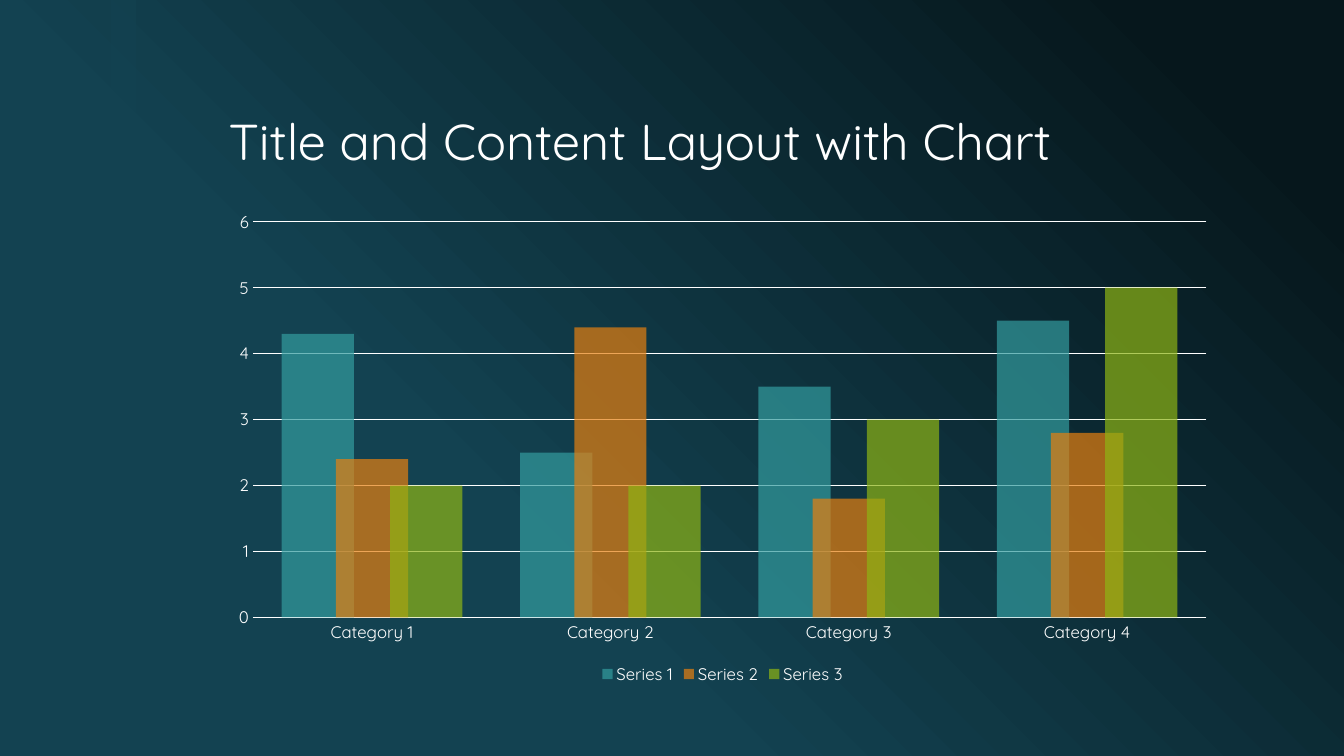
from lxml import etree
from pptx import Presentation
from pptx.chart.data import CategoryChartData
from pptx.dml.color import RGBColor
from pptx.enum import chart as charts, shapes, text
from pptx.oxml import ns
from pptx.util import Cm, Pt

FONT = "Quicksand"
WHITE, TEAL, NIGHT = "FFFFFF", "134251", "06171C"
CATEGORIES = [f"Category {n}" for n in range(1, 5)]
SERIES = [
    ("Series 1", (4.3, 2.5, 3.5, 4.5), "339C9F"),
    ("Series 2", (2.4, 4.4, 1.8, 2.8), "E68010"),
    ("Series 3", (2, 2, 3, 5), "8EB414"),
]


def color(hex_string):
    return RGBColor.from_string(hex_string)


def set_font(font, size):
    font.name = FONT
    font.size = Pt(size)
    font.bold = False
    font.color.rgb = color(WHITE)


def set_line(line, width):
    line.color.rgb = color(WHITE)
    line.width = Pt(width)


def fill_translucent(fill, hex_string, opacity, properties):
    """Fill solidly, with opacity in percent; properties is the spPr element."""
    fill.solid()
    fill.fore_color.rgb = color(hex_string)
    rgb = properties.find(ns.qn("a:solidFill")).find(ns.qn("a:srgbClr"))
    etree.SubElement(rgb, ns.qn("a:alpha")).set("val", str(opacity * 1000))


def paint_background(slide):
    fill = slide.background.fill
    fill.gradient()
    fill.gradient_angle = 225
    for stop, (position, shade) in zip(fill.gradient_stops, [(0.1, NIGHT), (0.65, TEAL)]):
        stop.position = position
        stop.color.rgb = color(shade)


def add_band(slide, left, top, width, height):
    band = slide.shapes.add_shape(shapes.MSO_SHAPE.RECTANGLE, left, top, width, height)
    band.shadow.inherit = False
    band.line.fill.background()
    fill_translucent(band.fill, TEAL, 60, band.element.spPr)


def add_title(slide, left, top, width, height, wording):
    frame = slide.shapes.add_textbox(left, top, width, height).text_frame
    frame.word_wrap = True
    frame.vertical_anchor = text.MSO_ANCHOR.BOTTOM
    heading = frame.paragraphs[0]
    heading.line_spacing = 0.9
    run = heading.add_run()
    run.text = wording
    set_font(run.font, 36)


def add_column_chart(slide, left, top, width, height):
    data = CategoryChartData()
    data.categories = CATEGORIES
    for name, values, _ in SERIES:
        data.add_series(name, values)
    chart = slide.shapes.add_chart(
        charts.XL_CHART_TYPE.COLUMN_CLUSTERED, left, top, width, height, data
    ).chart
    set_font(chart.font, 10)
    chart.has_title = False

    chart.has_legend = True
    chart.legend.position = charts.XL_LEGEND_POSITION.BOTTOM
    chart.legend.include_in_layout = False
    set_font(chart.legend.font, 12)

    for axis in (chart.category_axis, chart.value_axis):
        axis.major_tick_mark = axis.minor_tick_mark = charts.XL_TICK_MARK.NONE
        set_font(axis.tick_labels.font, 12)
    set_line(chart.category_axis.format.line, 1.25)
    chart.value_axis.format.line.fill.background()
    chart.value_axis.has_major_gridlines = True
    set_line(chart.value_axis.major_gridlines.format.line, 0.75)

    columns = chart.plots[0]
    columns.vary_by_categories = False
    columns.gap_width = 80
    columns.overlap = 25
    for series, (_, _, shade) in zip(columns.series, SERIES):
        series.invert_if_negative = False
        fill = series.format.fill
        fill.solid()
        fill_translucent(fill, shade, 70, series.format.element.spPr
                         if hasattr(series.format, "element")
                         else series._element.find(ns.qn("c:spPr")))


def main():
    deck = Presentation()
    deck.slide_width, deck.slide_height = Cm(33.87), Cm(19.05)
    slide = deck.slides.add_slide(deck.slide_layouts[6])
    content_left, content_width = Cm(5.51), Cm(25.4)
    paint_background(slide)
    add_band(slide, Cm(2.79), 0, Cm(0.64), deck.slide_height)
    add_title(slide, content_left, Cm(1.07), content_width, Cm(3.38),
              "Title and Content Layout with Chart")
    add_column_chart(slide, content_left, Cm(5.08), content_width, Cm(12.27))
    deck.save("out.pptx")


if __name__ == "__main__":
    main()
